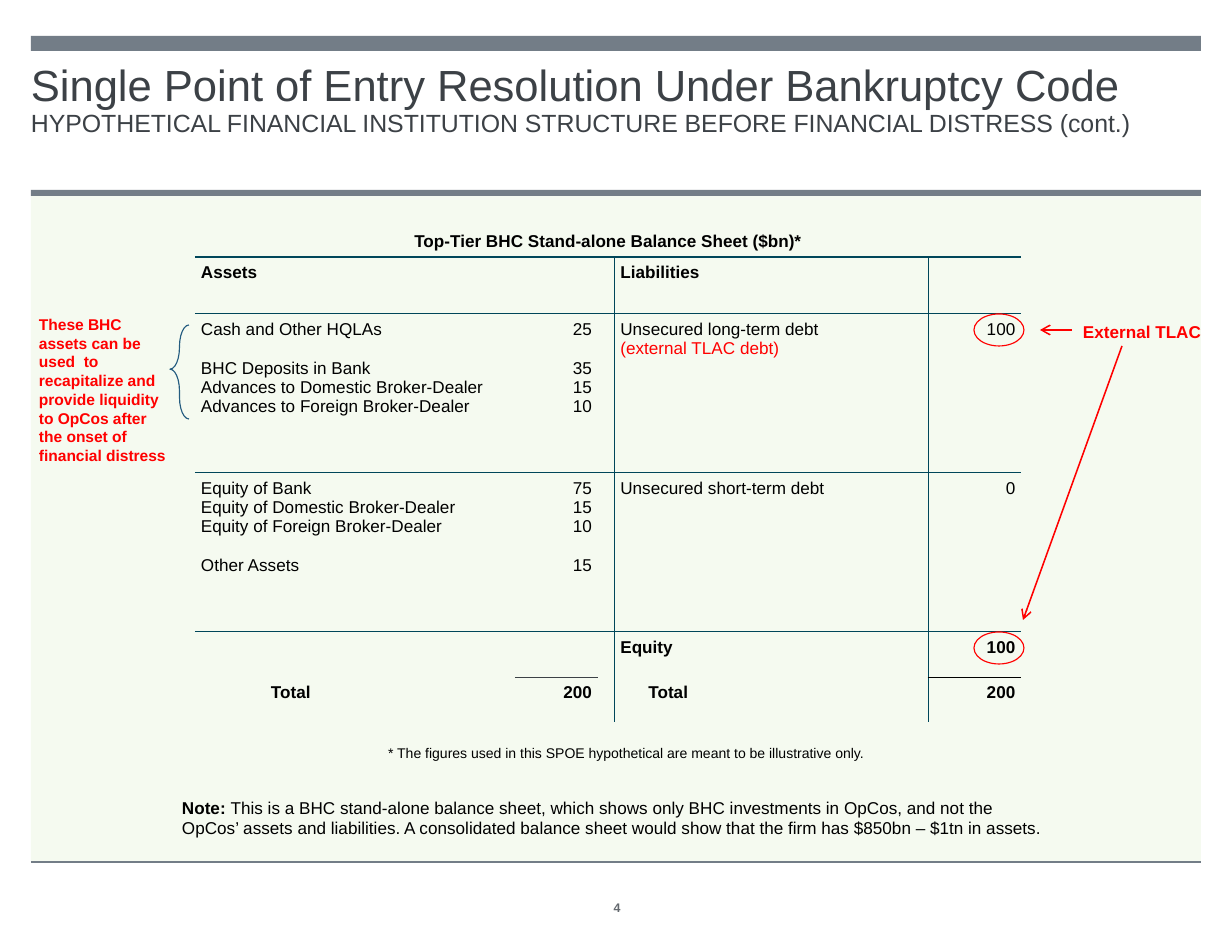
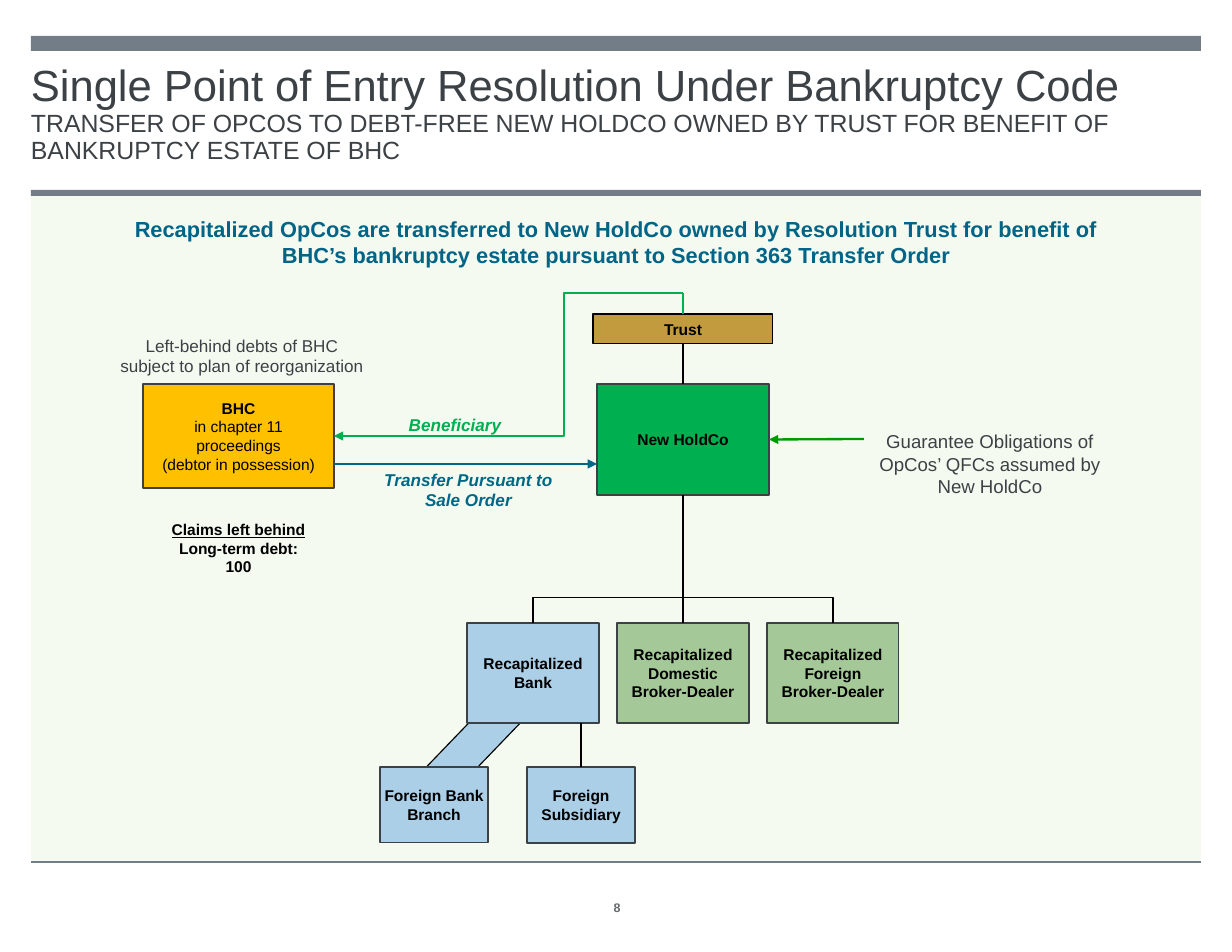
from lxml.etree import SubElement
from pptx import Presentation
from pptx.dml.color import RGBColor
from pptx.enum.shapes import MSO_CONNECTOR as LINE, MSO_SHAPE as SHAPE
from pptx.enum.text import MSO_ANCHOR as ANCHOR, PP_ALIGN as ALIGN
from pptx.oxml.ns import qn
from pptx.util import Emu, Pt

PX_PER_INCH = 112
FONT = "Arial"
BLACK, RED, GREEN = "000000", "FF0000", "00B050"
SLATE, PANEL, INK, PAGE_GREY = "737D87", "F5FAF0", "3C4146", "64696E"
TABLE_TEAL, HEADING_TEAL, ARROW_TEAL = "00465A", "006487", "006784"
BRACE_BLUE, GUARANTEE_GREEN = "255C80", "009900"
AMBER, GOLD, BLUE, SAGE = "FFC000", "C19B3D", "ABCFE7", "A4C897"

LEFT, WIDTH = 31, 1170
TITLE = "Single Point of Entry Resolution Under Bankruptcy Code"
NO_STYLE = "{2D5ABB26-0587-4C30-8999-92F81FD0307C}"

# In a list of paragraphs, None asks for a one-line gap before the next one.
SHEET_TITLE = "Top-Tier BHC Stand-alone Balance Sheet ($bn)*"
SHEET_ROWS = [
    (["Assets"], [], ["Liabilities"], []),
    (["Cash and Other HQLAs", None, "BHC Deposits in Bank",
      "Advances to Domestic Broker-Dealer", "Advances to Foreign Broker-Dealer"],
     ["25", None, "35", "15", "10"],
     ["Unsecured long-term debt", [("(external TLAC debt)", {"color": RED})]],
     ["100"]),
    (["Equity of Bank", "Equity of Domestic Broker-Dealer",
      "Equity of Foreign Broker-Dealer", None, "Other Assets"],
     ["75", "15", "10", None, "15"],
     ["Unsecured short-term debt"], ["0"]),
    ([], [], ["Equity"], ["100"]),
    (["Total"], ["200"], ["Total"], ["200"]),
]
TEXT_COLUMNS = (0, 1, 3, 4)
AMOUNT_COLUMNS = (1, 4)
BOLD_ROWS = (1, 4, 5)
COLUMN_WIDTHS = (320, 83, 15, 314, 93)
ROW_HEIGHTS = (62, 57, 159, 159, 45, 45)
TOTAL_INDENTS = {0: 76, 3: 34}

# Edges are keyed by (edge number, column) and (row, edge number).
ROW_EDGES = {(edge, column): (TABLE_TEAL, width)
             for edge, width in ((1, 1.25), (2, 0.75), (3, 0.75))
             for column in range(5)}
ROW_EDGES.update({(5, 1): (INK, 1), (5, 4): (BLACK, 1.25)})
COLUMN_EDGES = {(row, edge): (TABLE_TEAL, 1.25) for row in range(1, 6) for edge in (3, 4)}

SHEET_NOTE = [[
    ("Note: ", {"bold": True}),
    ("This is a BHC stand-alone balance sheet, which shows only BHC investments in OpCos, "
     "and not the OpCos’ assets and liabilities. A consolidated balance sheet would show "
     "that the firm has $850bn – $1tn in assets.", {})]]
ASSETS_NOTE = ["These BHC assets can be used  to recapitalize and provide liquidity "
               "to OpCos after the onset of financial distress"]
FIGURES_NOTE = ["* The figures used in this SPOE hypothetical are meant to be illustrative only."]

HEADLINE = ["Recapitalized OpCos are transferred to New HoldCo owned by Resolution Trust "
            "for benefit of",
            "BHC’s bankruptcy estate pursuant to Section 363 Transfer Order"]
BHC_TEXT = [[("BHC", {"bold": True})], "in chapter 11", "proceedings", "(debtor in possession)"]
OPCOS = [
    (["Recapitalized", "Bank"], BLUE),
    (["Recapitalized", "Domestic", "Broker-Dealer"], SAGE),
    (["Recapitalized", "Foreign", "Broker-Dealer"], SAGE),
]
CLAIMS = [[("Claims left behind", {"underline": True})], "Long-term debt: 100"]


def px(length):
    return Emu(round(length * 914400 / PX_PER_INCH))


def rgb(color):
    return RGBColor.from_string(color)


def style(font, color=None, **settings):
    if color:
        font.color.rgb = rgb(color)
    for name, value in settings.items():
        setattr(font, name, value)


def write(frame, paragraphs, size, color=BLACK, bold=False, italic=False, align=ALIGN.LEFT):
    """Fill a frame; a paragraph is a string or a list of (text, font settings)."""
    paragraph, gap = None, False
    for item in paragraphs:
        if item is None:
            gap = True
            continue
        paragraph = frame.add_paragraph() if paragraph else frame.paragraphs[0]
        paragraph.alignment = align
        style(paragraph.font, color, name=FONT, size=Pt(size), bold=bold, italic=italic)
        if gap:
            paragraph.space_before, gap = Pt(size * 1.15), False
        for text, settings in [(item, {})] if isinstance(item, str) else item:
            run = paragraph.add_run()
            run.text = text
            style(run.font, **settings)


def set_margins(target, across, down):
    target.margin_left = target.margin_right = px(across)
    target.margin_top = target.margin_bottom = px(down)


def add_text(slide, box, paragraphs, size, margins=(11, 6), anchor=ANCHOR.TOP, **look):
    frame = slide.shapes.add_textbox(*map(px, box)).text_frame
    frame.word_wrap = True
    frame.vertical_anchor = anchor
    set_margins(frame, *margins)
    write(frame, paragraphs, size, **look)
    return frame


def add_shape(slide, kind, box, fill=None, line=None, width=0.75):
    shape = slide.shapes.add_shape(kind, *map(px, box))
    shape.shadow.inherit = False
    if fill:
        shape.fill.solid()
        shape.fill.fore_color.rgb = rgb(fill)
    else:
        shape.fill.background()
    if line:
        shape.line.color.rgb = rgb(line)
        shape.line.width = Pt(width)
    else:
        shape.line.fill.background()
    return shape


def add_entity(slide, box, paragraphs, fill, line=INK, width=0.75, bold=True):
    shape = add_shape(slide, SHAPE.RECTANGLE, box, fill, line, width)
    frame = shape.text_frame
    frame.word_wrap = False
    frame.vertical_anchor = ANCHOR.MIDDLE
    set_margins(frame, 12, 6)
    write(frame, paragraphs, 10, bold=bold, align=ALIGN.CENTER)
    return shape


def add_line(slide, start, end, color, width=1, arrow=None, kind=LINE.STRAIGHT):
    connector = slide.shapes.add_connector(kind, *map(px, start + end))
    connector.line.color.rgb = rgb(color)
    connector.line.width = Pt(width)
    properties = connector.element.spPr
    if arrow:
        SubElement(properties.find(qn("a:ln")), qn("a:tailEnd"), type=arrow)
    SubElement(properties, qn("a:effectLst"))
    return connector


def add_elbow(slide, start, end, color, bend, upright=False, **look):
    """Bent connector; an upright one leaves vertically, as a box turned by 270 degrees."""
    if upright:
        middle_x, middle_y = [(a + b) / 2 for a, b in zip(start, end)]
        start, end = [(middle_x - (y - middle_y), middle_y + (x - middle_x))
                      for x, y in (start, end)]
    connector = add_line(slide, start, end, color, kind=LINE.ELBOW, **look)
    properties = connector.element.spPr
    if upright:
        properties.find(qn("a:xfrm")).set("rot", str(270 * 60000))
    guides = properties.find(qn("a:prstGeom")).find(qn("a:avLst"))
    SubElement(guides, qn("a:gd"), name="adj1", fmla=f"val {round(bend * 100000)}")


def add_base(presentation, subtitle, number):
    """Blank slide with the shared panel, bands, title and page number."""
    slide = presentation.slides.add_slide(presentation.slide_layouts[6])
    for top, height, color in ((196, 665, PANEL), (190, 6, SLATE), (36, 15, SLATE)):
        add_shape(slide, SHAPE.RECTANGLE, (LEFT, top, WIDTH, height), color)
    add_line(slide, (LEFT, 862), (LEFT + WIDTH, 862), SLATE)
    title = add_text(slide, (LEFT, 64, WIDTH, 126), [TITLE], 28, (0, 0), color=INK).paragraphs[0]
    title.line_spacing = 0.9
    title.add_line_break()
    run = title.add_run()
    run.text = subtitle
    run.font.size = Pt(16)
    add_text(slide, (566, 893, 102, 28), [number], 8, anchor=ANCHOR.MIDDLE,
             color=PAGE_GREY, bold=True, align=ALIGN.CENTER)
    return slide


def add_borders(cell, row, column):
    properties = cell._tc.get_or_add_tcPr()
    edges = (("L", COLUMN_EDGES.get((row, column))), ("R", COLUMN_EDGES.get((row, column + 1))),
             ("T", ROW_EDGES.get((row, column))), ("B", ROW_EDGES.get((row + 1, column))))
    for side, edge in edges:
        if edge:
            color, width = edge
            line = SubElement(properties, qn("a:ln" + side), w=str(Pt(width)))
            SubElement(SubElement(line, qn("a:solidFill")), qn("a:srgbClr"), val=color)


def add_balance_sheet(slide):
    size = (195, 195, sum(COLUMN_WIDTHS), sum(ROW_HEIGHTS))
    frame = slide.shapes.add_table(len(ROW_HEIGHTS), len(COLUMN_WIDTHS), *map(px, size))
    table = frame.table
    table.first_row = table.horz_banding = False
    frame.element.find(".//" + qn("a:tableStyleId")).text = NO_STYLE
    for column, width in zip(table.columns, COLUMN_WIDTHS):
        column.width = px(width)
    for row, height in zip(table.rows, ROW_HEIGHTS):
        row.height = px(height)
    for row in range(len(ROW_HEIGHTS)):
        for column in range(len(COLUMN_WIDTHS)):
            cell = table.cell(row, column)
            set_margins(cell, 6, 6)
            add_borders(cell, row, column)
            cell.fill.background()
    table.cell(0, 0).merge(table.cell(0, 4))
    table.cell(4, 2).merge(table.cell(5, 2))
    heading = table.cell(0, 0)
    heading.vertical_anchor = ANCHOR.BOTTOM
    write(heading.text_frame, [SHEET_TITLE], 11, bold=True, align=ALIGN.CENTER)
    for row, texts in enumerate(SHEET_ROWS, 1):
        for column, paragraphs in zip(TEXT_COLUMNS, texts):
            align = ALIGN.RIGHT if column in AMOUNT_COLUMNS else ALIGN.LEFT
            write(table.cell(row, column).text_frame, paragraphs, 11,
                  bold=row in BOLD_ROWS, align=align)
    for column, indent in TOTAL_INDENTS.items():
        table.cell(5, column).margin_left = px(indent)


def build_balance_slide(presentation):
    slide = add_base(presentation, "HYPOTHETICAL FINANCIAL INSTITUTION STRUCTURE "
                     "BEFORE FINANCIAL DISTRESS (cont.)", "4")
    add_text(slide, (171, 791, 886, 53), SHEET_NOTE, 11)
    add_balance_sheet(slide)
    brace = add_shape(slide, SHAPE.LEFT_BRACE, (170, 325, 19, 94), line=BRACE_BLUE)
    brace.adjustments[0], brace.adjustments[1] = 1.14, 0.47
    add_text(slide, (28, 309, 152, 143), ASSETS_NOTE, 10, color=RED, bold=True)
    add_text(slide, (51, 739, 1150, 29), FIGURES_NOTE, 9, align=ALIGN.CENTER)
    for top in (314, 632):
        add_shape(slide, SHAPE.OVAL, (974, top, 50, 32), line=RED)
    add_text(slide, (1072, 315, 146, 32), ["External TLAC"], 11, color=RED, bold=True)
    for start, end in (((1072, 330), (1040, 330)), ((1122, 346), (1023, 620))):
        add_line(slide, start, end, RED, arrow="arrow")


def build_transfer_slide(presentation):
    slide = add_base(presentation, "TRANSFER OF OPCOS TO DEBT-FREE NEW HOLDCO OWNED BY TRUST "
                     "FOR BENEFIT OF BANKRUPTCY ESTATE OF BHC", "8")
    centered = {"align": ALIGN.CENTER}
    add_text(slide, (32, 210, 1169, 64), HEADLINE, 14, color=HEADING_TEAL, bold=True, **centered)
    add_shape(slide, SHAPE.DIAGONAL_STRIPE, (425, 715, 103, 107), BLUE, BLACK)

    add_entity(slide, (143, 384, 191, 104), BHC_TEXT, AMBER, bold=False)
    holdco = add_entity(slide, (597, 384, 172, 111), ["New HoldCo"], GREEN)
    trust = add_entity(slide, (593, 314, 180, 30), ["Trust"], GOLD, BLACK)
    opco_width, opco_top, opco_height = 132, 623, 100
    opco_lefts = [467 + 150 * index for index in range(len(OPCOS))]
    _, domestic, _ = [
        add_entity(slide, (left, opco_top, opco_width, opco_height), text, fill)
        for left, (text, fill) in zip(opco_lefts, OPCOS)]
    add_entity(slide, (380, 767, 108, 76), ["Foreign Bank", "Branch"], BLUE)
    subsidiary = add_entity(slide, (527, 767, 108, 76), ["Foreign", "Subsidiary"], BLUE, width=1)

    for upper, lower in ((trust, holdco), (holdco, domestic)):
        link = add_line(slide, (683, 344), (683, 384), BLACK)
        link.begin_connect(upper, 2)
        link.end_connect(lower, 0)
    for left in (opco_lefts[0], opco_lefts[-1]):
        add_elbow(slide, (left + opco_width / 2, opco_top), (683, 495), BLACK, 0.2, upright=True)
    add_line(slide, (581, 767), (581, 723), BLACK).begin_connect(subsidiary, 0)
    add_line(slide, (683, 314), (683, 293), GREEN, 1.5).begin_connect(trust, 0)
    add_elbow(slide, (683, 293), (334, 436), GREEN, 0.34, width=1.5, arrow="triangle")
    add_line(slide, (334, 464), (597, 464), ARROW_TEAL, 1.5, "triangle")
    add_line(slide, (864, 439), (769, 439), GUARANTEE_GREEN, 1.5, "triangle").end_connect(holdco, 3)

    add_text(slide, (856, 424, 268, 80),
             ["Guarantee Obligations of OpCos’ QFCs assumed by New HoldCo"],
             12, color=INK, **centered)
    add_text(slide, (103, 329, 278, 54),
             ["Left-behind debts of BHC", "subject to plan of reorganization"],
             11, color=INK, **centered)
    add_text(slide, (320, 463, 297, 53), ["Transfer Pursuant to", "Sale Order"], 11,
             color=ARROW_TEAL, bold=True, italic=True, **centered)
    add_text(slide, (356, 408, 198, 32), ["Beneficiary"], 11,
             color=GREEN, bold=True, italic=True, **centered)
    add_text(slide, (156, 514, 165, 108), CLAIMS, 10, bold=True, **centered)


def main():
    presentation = Presentation()
    presentation.slide_width, presentation.slide_height = px(1232), px(952)
    build_balance_slide(presentation)
    build_transfer_slide(presentation)
    presentation.save("out.pptx")


if __name__ == "__main__":
    main()
